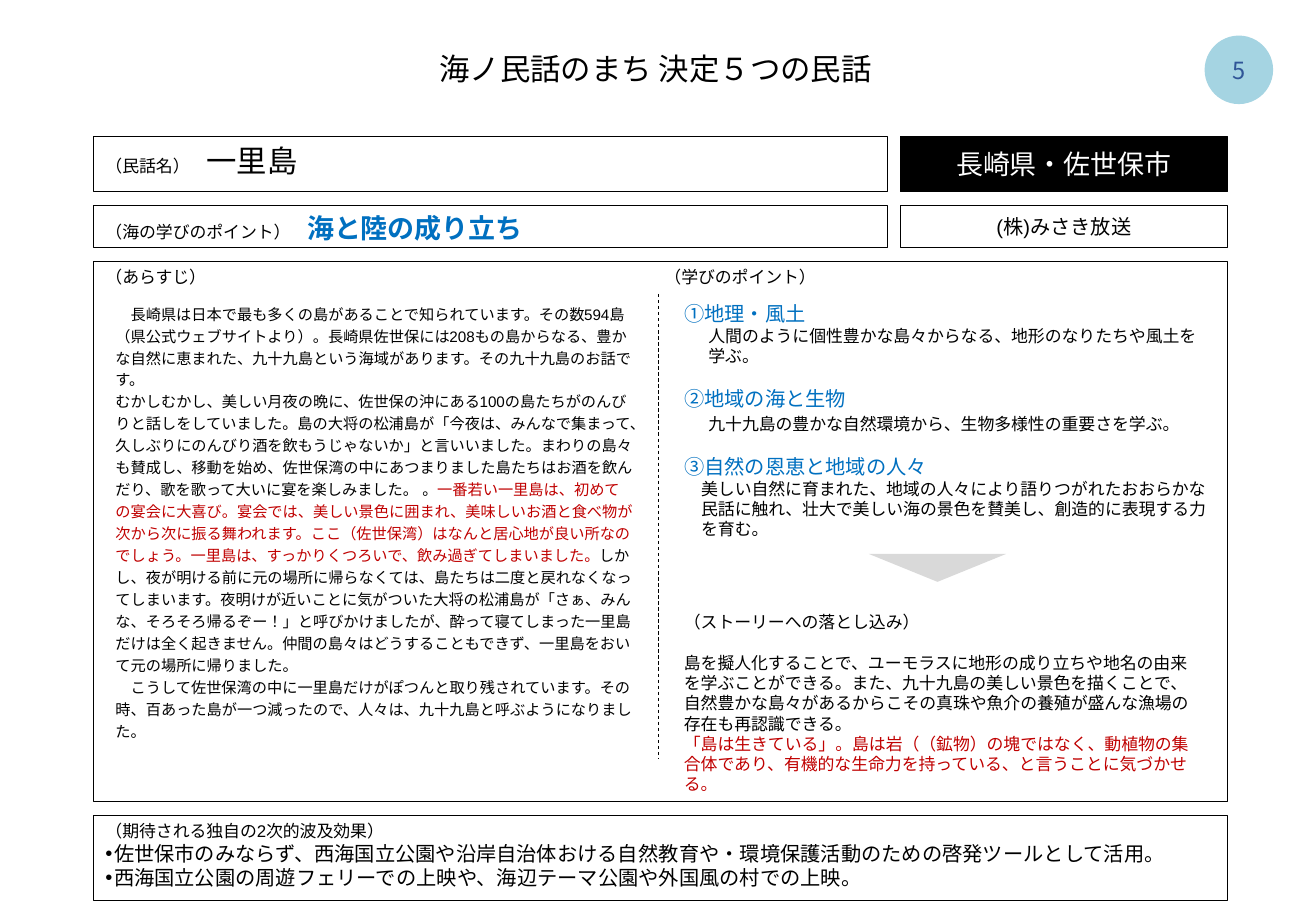
from dataclasses import dataclass

from lxml import etree
from pptx import Presentation
from pptx.dml.color import RGBColor
from pptx.enum.dml import MSO_LINE
from pptx.enum.lang import MSO_LANGUAGE_ID
from pptx.enum.shapes import MSO_CONNECTOR, MSO_SHAPE
from pptx.enum.text import MSO_ANCHOR, MSO_AUTO_SIZE, PP_ALIGN
from pptx.oxml.ns import qn
from pptx.util import Inches, Pt

RECT, OVAL, TRIANGLE = MSO_SHAPE.RECTANGLE, MSO_SHAPE.OVAL, MSO_SHAPE.ISOSCELES_TRIANGLE
LEFT, CENTER = PP_ALIGN.LEFT, PP_ALIGN.CENTER
TOP, MIDDLE = MSO_ANCHOR.TOP, MSO_ANCHOR.MIDDLE


@dataclass(frozen=True)
class Theme:
    black: str = "000000"
    white: str = "FFFFFF"
    blue: str = "0070C0"
    red: str = "C00000"
    navy: str = "2F5597"
    sky: str = "A5D4E2"
    grey: str = "D9D9D9"
    font: str = "Arial"
    head: str = "Calibri"
    digit: str = "Noto Sans CJK JP"
    story: int = 9
    small: int = 10
    lead: int = 12
    page: int = 14
    label: int = 16
    title: int = 18
    pitch: float = 1.2


T = Theme()

# A run is (text, size, colour); a paragraph is a list of runs plus options.
TITLE = "海ノ民話のまち 決定５つの民話"
PAGE = "5"
NAME = [("（民話名）　", T.small, T.black), ("一里島", T.title, T.black)]
THEME = [("（海の学びのポイント）　", T.small, T.black), ("海と陸の成り立ち", T.label, T.blue)]
PLACE = [("長崎県・佐世保市", T.label, T.white)]
STATION = [("(株)みさき放送", T.lead, T.black)]
PLOT_HEAD = [("（あらすじ）", T.small, T.black)]
POINT_HEAD = [("（学びのポイント）", T.small, T.black)]

STORY = [
    ([("長崎県は日本で最も多くの島があることで知られています。その数594島（県公式ウェブサイトより）。長崎県佐世保には208もの島からなる、豊かな自然に恵まれた、九十九島という海域があります。その九十九島のお話です。", T.story, T.black)],
     {"first": 0.125}),
    ([("むかしむかし、美しい月夜の晩に、佐世保の沖にある100の島たちがのんびりと話しをしていました。島の大将の松浦島が「今夜は、みんなで集まって、久しぶりにのんびり酒を飲もうじゃないか」と言いいました。まわりの島々も賛成し、移動を始め、佐世保湾の中にあつまりました島たちはお酒を飲んだり、歌を歌って大いに宴を楽しみました。 。", T.story, T.black),
      ("一番若い一里島は、初めての宴会に大喜び。宴会では、美しい景色に囲まれ、美味しいお酒と食べ物が次から次に振る舞われます。ここ（佐世保湾）はなんと居心地が良い所なのでしょう。一里島は、すっかりくつろいで、飲み過ぎてしまいました。", T.story, T.red),
      ("しかし、夜が明ける前に元の場所に帰らなくては、島たちは二度と戻れなくなってしまいます。夜明けが近いことに気がついた大将の松浦島が「さぁ、みんな、そろそろ帰るぞー！」と呼びかけましたが、酔って寝てしまった一里島だけは全く起きません。仲間の島々はどうすることもできず、一里島をおいて元の場所に帰りました。", T.story, T.black)],
     {}),
    ([("こうして佐世保湾の中に一里島だけがぽつんと取り残されています。その時、百あった島が一つ減ったので、人々は、九十九島と呼ぶようになりました。", T.story, T.black)],
     {"first": 0.125}),
]

# heading, text, left indent, space above the text
POINTS = [
    ("①地理・風土", "人間のように個性豊かな島々からなる、地形のなりたちや風土を学ぶ。", 0.2, 0),
    ("②地域の海と生物", "九十九島の豊かな自然環境から、生物多様性の重要さを学ぶ。", 0.2, 2),
    ("③自然の恩恵と地域の人々", "美しい自然に育まれた、地域の人々により語りつがれたおおらかな民話に触れ、壮大で美しい海の景色を賛美し、創造的に表現する力を育む。", 0.14, 0),
]

USE = [
    ([("（ストーリーへの落とし込み）", T.small, T.black)], {}),
    ([("島を擬人化することで、ユーモラスに地形の成り立ちや地名の由来を学ぶことができる。また、九十九島の美しい景色を描くことで、自然豊かな島々があるからこその真珠や魚介の養殖が盛んな漁場の存在も再認識できる。", T.small, T.black)],
     {"before": 12}),
    ([("「島は生きている」。島は岩（（鉱物）の塊ではなく、動植物の集合体であり、有機的な生命力を持っている、と言うことに気づかせる。", T.small, T.red)], {}),
]

EFFECTS = [
    "佐世保市のみならず、西海国立公園や沿岸自治体おける自然教育や・環境保護活動のための啓発ツールとして活用。",
    "西海国立公園の周遊フェリーでの上映や、海辺テーマ公園や外国風の村での上映。",
]


def color(code):
    return RGBColor.from_string(code)


def style(run, size, code, face, bold=False):
    font = run.font
    font.size, font.name, font.bold = Pt(size), face, bold
    font.color.rgb = color(code)
    font.language_id = MSO_LANGUAGE_ID.JAPANESE
    latin = run._r.rPr.find(qn("a:latin"))
    east = etree.Element(qn("a:ea"), typeface=face)
    latin.addnext(east)


def write(para, runs, face=T.font, align=LEFT, left=0, first=0, before=0,
          bullet=None, pitch=T.pitch):
    """Fill one paragraph; indents are in inches, space before in points."""
    props = para._p.get_or_add_pPr()
    props.set("marL", str(Inches(left)))
    props.set("indent", str(Inches(first)))
    if bullet:
        etree.SubElement(props, qn("a:buFont"), typeface=face)
        etree.SubElement(props, qn("a:buChar"), char=bullet)
    else:
        etree.SubElement(props, qn("a:buNone"))
    para.alignment = align
    para.space_before = Pt(before)
    if pitch:
        para.line_spacing = Pt(round(max(run[1] for run in runs) * pitch, 1))
    for text, size, code in runs:
        run = para.add_run()
        run.text = text
        style(run, size, code, face, bold=runs is THEME and size == T.label)


def fill(shape, paras, anchor=TOP, wrap=True, **common):
    frame = shape.text_frame
    frame.auto_size = MSO_AUTO_SIZE.NONE
    frame.word_wrap, frame.vertical_anchor = wrap, anchor
    for i, (runs, opts) in enumerate(paras):
        para = frame.add_paragraph() if i else frame.paragraphs[0]
        write(para, runs, **{**common, **opts})


def place(shape, box):
    shape.left, shape.top, shape.width, shape.height = map(Inches, box)
    return shape


def draw(slide, kind, box, back=None, edge=None, width=0.5):
    shape = slide.shapes.add_shape(kind, *map(Inches, box))
    shape.shadow.inherit = False
    if back:
        shape.fill.solid()
        shape.fill.fore_color.rgb = color(back)
    else:
        shape.fill.background()
    if edge:
        shape.line.color.rgb = color(edge)
        shape.line.width = Pt(width)
    else:
        shape.line.fill.background()
    return shape


def divide(slide, x, top, end):
    line = slide.shapes.add_connector(
        MSO_CONNECTOR.STRAIGHT, Inches(x), Inches(top), Inches(x), Inches(end))
    line.line.color.rgb = color(T.black)
    line.line.width = Pt(0.5)
    line.line.dash_style = MSO_LINE.DASH
    etree.SubElement(line._element.spPr, qn("a:effectLst"))


def main():
    deck = Presentation()
    deck.slide_width, deck.slide_height = Inches(10.83), Inches(7.5)
    slide = deck.slides.add_slide(deck.slide_layouts[3])
    title, story, points = slide.placeholders

    fill(place(title, (3.5, 0.36, 3.79, 0.4)), [([(TITLE, T.title, T.black)], {})],
         MIDDLE, wrap=False, face=T.head, align=CENTER, pitch=None)
    fill(place(story, (0.85, 2.43, 4.47, 3.73)), STORY, pitch=1.44)

    lines = []
    for i, (head, text, left, gap) in enumerate(POINTS):
        lines.append(([(head, T.lead, T.blue)], {"before": 12 if i else 0}))
        lines.append(([(text, T.small, T.black)], {"left": left, "before": gap}))
    fill(place(points, (5.53, 2.43, 4.53, 2.09)), lines)

    badge = draw(slide, OVAL, (9.92, 0.3, 0.55, 0.55), T.sky, T.sky, 1)
    fill(badge, [([(PAGE, T.page, T.navy)], {})], MIDDLE,
         wrap=False, face=T.digit, align=CENTER, pitch=None)

    left, side, wide = 0.77, 7.41, 9.33
    rows = [(1.12, 0.46, NAME, PLACE, T.black), (1.69, 0.35, THEME, STATION, None)]
    for top, high, main_runs, side_runs, back in rows:
        box = draw(slide, RECT, (left, top, 6.53, high), None, T.black)
        fill(box, [(main_runs, {})], pitch=None)
        box = draw(slide, RECT, (side, top, 2.69, high), back, T.black)
        fill(box, [(side_runs, {})], MIDDLE, align=CENTER, pitch=None)

    panel = draw(slide, RECT, (left, 2.15, wide, 4.45), None, T.black)
    fill(panel, [(PLOT_HEAD, {})])
    label = slide.shapes.add_textbox(*map(Inches, (5.37, 2.15, 2, 0.27)))
    fill(label, [(POINT_HEAD, {})])
    divide(slide, 5.42, 2.42, 6.24)
    draw(slide, TRIANGLE, (7.15, 4.56, 1.13, 0.23), T.grey).rotation = 180

    use = slide.shapes.add_textbox(*map(Inches, (5.53, 4.99, 4.45, 1.62)))
    fill(use, USE)

    effect = [([("（期待される独自の2次的波及効果）", T.small, T.black)], {})]
    effect += [([(text, T.lead, T.black)], {"left": 0.07, "first": -0.07, "bullet": "•"})
               for text in EFFECTS]
    fill(draw(slide, RECT, (left, 6.71, wide, 0.7), None, T.black), effect)

    deck.save("out.pptx")


if __name__ == "__main__":
    main()
